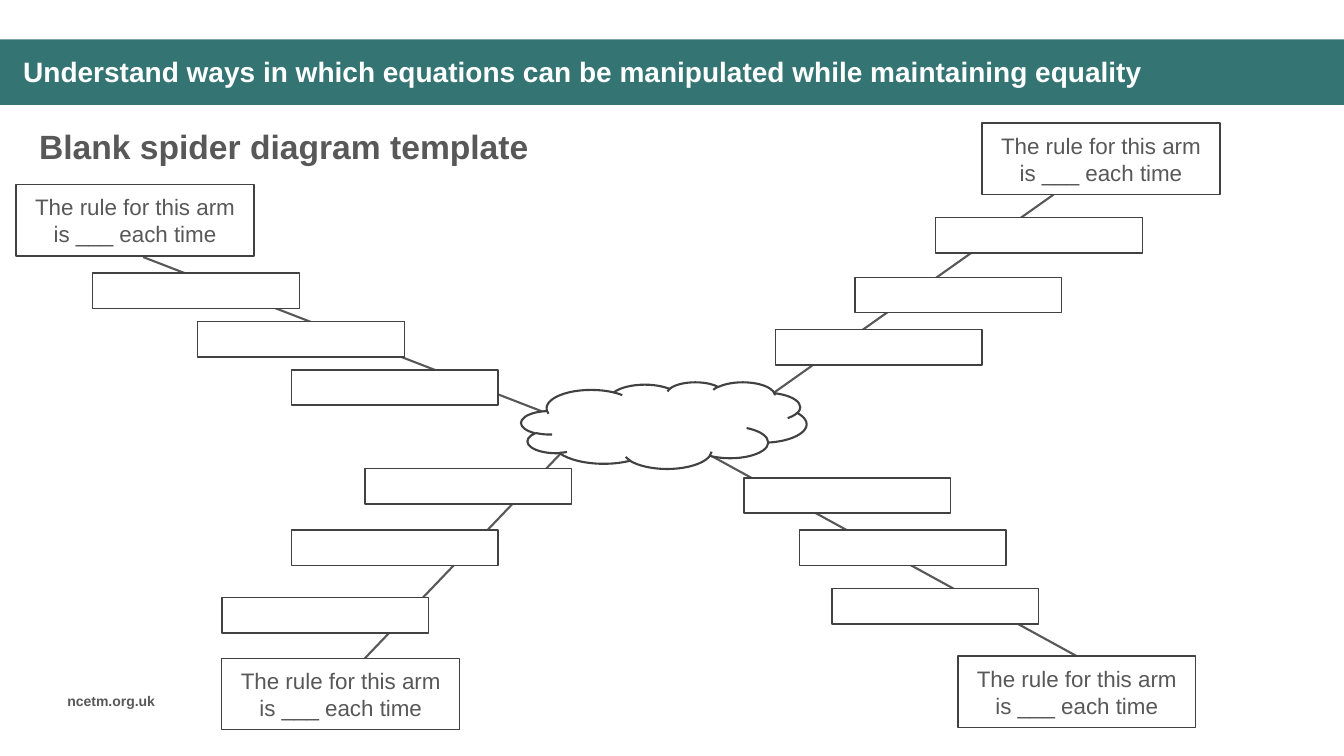
"""Build a blank spider diagram slide with four arms around a cloud."""
from dataclasses import dataclass

from lxml import etree
from pptx import Presentation
from pptx.dml.color import RGBColor
from pptx.enum.shapes import MSO_CONNECTOR, MSO_SHAPE
from pptx.enum.text import MSO_ANCHOR, MSO_AUTO_SIZE, PP_ALIGN
from pptx.oxml.ns import qn
from pptx.shapes.autoshape import Shape
from pptx.slide import Slide
from pptx.util import Inches, Length, Pt

RECTANGLE, CLOUD = MSO_SHAPE.RECTANGLE, MSO_SHAPE.CLOUD
STRAIGHT = MSO_CONNECTOR.STRAIGHT
TOP, MIDDLE = MSO_ANCHOR.TOP, MSO_ANCHOR.MIDDLE
LEFT, CENTER = PP_ALIGN.LEFT, PP_ALIGN.CENTER
NO_FIT = MSO_AUTO_SIZE.NONE
TITLE_ONLY = 5
CELLS_PER_INCH = 10
RULE = "The rule for this arm is ___ each time"


@dataclass(frozen=True)
class Theme:
    """Colours, font and type sizes of the slide."""
    band: RGBColor = RGBColor(0x34, 0x75, 0x74)
    ink: RGBColor = RGBColor(0x58, 0x58, 0x58)
    outline: RGBColor = RGBColor(0x41, 0x41, 0x41)
    white: RGBColor = RGBColor(0xFF, 0xFF, 0xFF)
    font: str = "Arial"
    title: int = 20
    heading: int = 24
    rule: int = 16
    footer: int = 10
    thin: float = 1
    thick: float = 1.5


@dataclass(frozen=True)
class Area:
    """A rectangle in grid columns and rows."""
    column: float
    row: float
    columns: float
    rows: float

    def place(self) -> dict[str, Length]:
        """Return the position and size as shape attributes."""
        return {"left": grid(self.column), "top": grid(self.row),
                "width": grid(self.columns), "height": grid(self.rows)}


@dataclass(frozen=True)
class Arm:
    """One arm: its line, its rule box corner and its step box corners."""
    start: tuple[float, float]
    end: tuple[float, float]
    rule: tuple[float, float]
    steps: tuple[tuple[float, float], ...]


THEME = Theme()
RULE_SIZE = (23.6, 7.1)
STEP_SIZE = (20.5, 3.5)
ARMS = (
    Arm((76.7, 39), (104.5, 19.3), (97.4, 12.2),
        ((76.9, 32.7), (84.8, 27.5), (92.8, 21.6))),
    Arm((70.5, 45.2), (106.8, 65.1), (95, 65.1),
        ((73.8, 47.4), (79.3, 52.6), (82.5, 58.4))),
    Arm((14.2, 25.5), (54.5, 41.1), (1.6, 18.3),
        ((28.9, 36.7), (19.6, 31.9), (9.2, 27.1))),
    Arm((36.2, 65.3), (55.7, 44.9), (22, 65.3),
        ((36.2, 46.5), (28.9, 52.6), (22, 59.3))),
)


def grid(cells: float) -> Length:
    """Convert grid cells to a length."""
    return Inches(cells / CELLS_PER_INCH)


def assign(target: object, values: dict) -> None:
    """Set every attribute named in the values."""
    for name, value in values.items():
        setattr(target, name, value)


def write(box: Shape, text: str, size: int, color: RGBColor, bold: bool = True,
          align: PP_ALIGN = LEFT, anchor: MSO_ANCHOR = TOP, spacing: float = 1) -> None:
    """Write one formatted paragraph into a box."""
    assign(box.text_frame, {"text": text, "word_wrap": True, "auto_size": NO_FIT,
                            "vertical_anchor": anchor})
    para = box.text_frame.paragraphs[0]
    assign(para, {"alignment": align, "line_spacing": spacing, "space_before": Pt(0)})
    span = para.runs[0]
    assign(span.font, {"name": THEME.font, "size": Pt(size), "bold": bold})
    span.font.color.rgb = color


def add_label(page: Slide, area: Area, text: str, size: int) -> None:
    """Add a bold text box."""
    write(page.shapes.add_textbox(**area.place()), text, size, THEME.ink)


def add_box(page: Slide, area: Area, kind: MSO_SHAPE = RECTANGLE,
            weight: float = THEME.thin) -> Shape:
    """Add a white outlined shape."""
    box = page.shapes.add_shape(kind, **area.place())
    box.shadow.inherit = False
    box.fill.solid()
    box.fill.fore_color.rgb = THEME.white
    box.line.color.rgb = THEME.outline
    box.line.width = Pt(weight)
    return box


def add_band(page: Slide) -> None:
    """Add the coloured band behind the title."""
    band = add_box(page, Area(0, 3.9, 133.3, 6.5))
    band.fill.fore_color.rgb = THEME.band
    band.line.fill.background()


def add_line(page: Slide, arm: Arm) -> None:
    """Add the line of an arm."""
    ends = [grid(cells) for cells in (*arm.start, *arm.end)]
    line = page.shapes.add_connector(STRAIGHT, *ends)
    line.line.color.rgb = THEME.ink
    line.line.width = Pt(THEME.thick)
    etree.SubElement(line._element.spPr, qn("a:effectLst"))


def add_title(page: Slide) -> None:
    """Fill the title placeholder and bring it in front of the band."""
    title = page.shapes.title
    assign(title, Area(1.3, 4.9, 115.8, 4.7).place())
    write(title, "Understand ways in which equations can be manipulated "
          "while maintaining equality", THEME.title, THEME.white,
          anchor=MIDDLE, spacing=0.9)
    title._element.getparent().append(title._element)


def add_arm_boxes(page: Slide, arm: Arm) -> None:
    """Add the rule box and the empty step boxes of an arm."""
    rule = add_box(page, Area(*arm.rule, *RULE_SIZE))
    write(rule, RULE, THEME.rule, THEME.ink, bold=False, align=CENTER, anchor=MIDDLE)
    for corner in arm.steps:
        add_box(page, Area(*corner, *STEP_SIZE))


def main() -> None:
    """Build and save the deck."""
    deck = Presentation()
    assign(deck, {"slide_width": grid(133.3), "slide_height": grid(75)})
    page = deck.slides.add_slide(deck.slide_layouts[TITLE_ONLY])
    add_band(page)
    add_label(page, Area(5.7, 68.2, 12.1, 2.7), "ncetm.org.uk", THEME.footer)
    for arm in ARMS:
        add_line(page, arm)
    add_title(page)
    add_label(page, Area(2.9, 12, 66.6, 5), "Blank spider diagram template", THEME.heading)
    add_box(page, Area(51.7, 37.9, 28.3, 8.6), CLOUD, THEME.thick)
    for arm in ARMS:
        add_arm_boxes(page, arm)
    deck.save("out.pptx")


if __name__ == "__main__":
    main()
